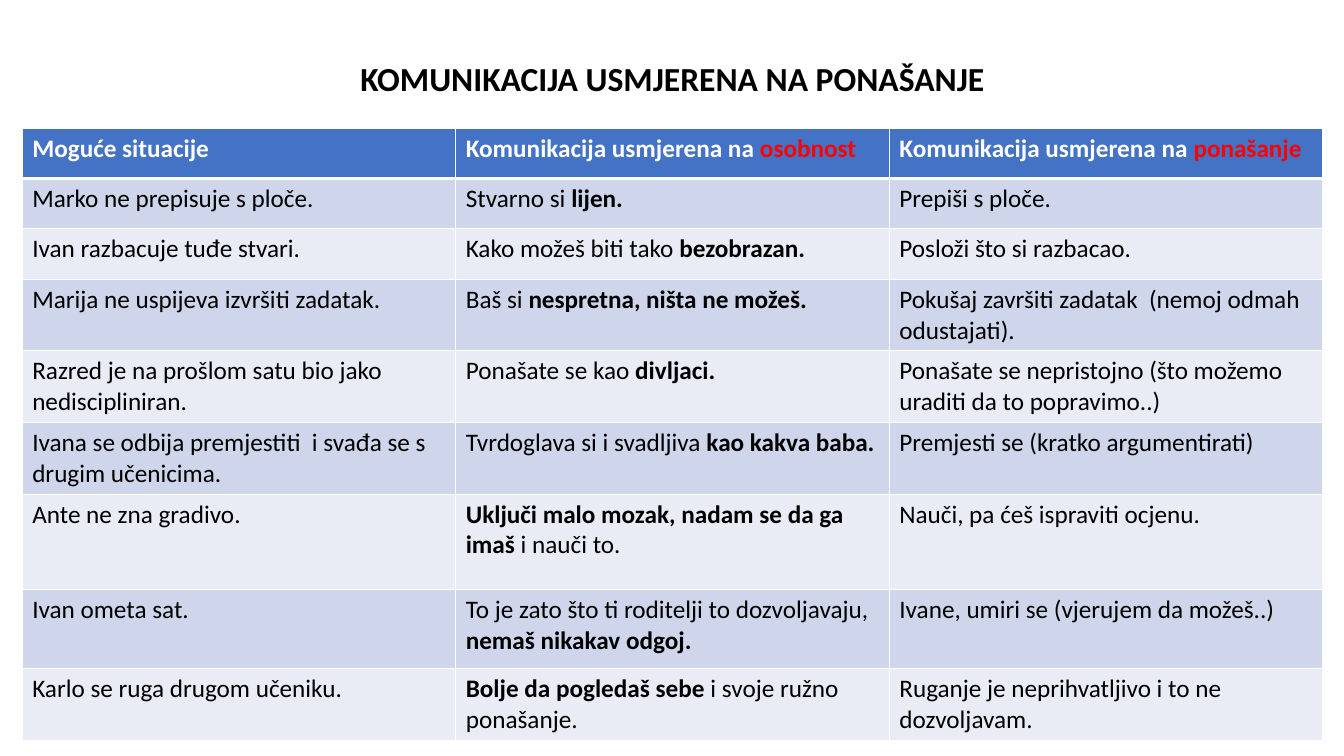
import dataclasses

import pptx
import pptx.dml.color
import pptx.enum.text
import pptx.oxml
import pptx.oxml.ns
import pptx.util

Inches = pptx.util.Inches
Pt = pptx.util.Pt


@dataclasses.dataclass(frozen=True)
class Theme:
    font: str = "Calibri"
    title_size: int = 24
    table_size: int = 18
    text: str = "000000"
    light: str = "FFFFFF"
    header: str = "4472C4"
    accent: str = "FF0000"
    bands: tuple = ("CFD5EA", "E9EBF5")
    border: int = 1
    header_border: int = 3


HEADINGS = (
    "Moguće situacije",
    "Komunikacija usmjerena na *osobnost*",
    "Komunikacija usmjerena na *ponašanje*",
)

SITUATIONS = (
    ("Marko ne prepisuje s ploče.", "Stvarno si *lijen.*", "Prepiši s ploče."),
    ("Ivan razbacuje tuđe stvari.", "Kako možeš biti tako *bezobrazan.*",
     "Posloži što si razbacao."),
    ("Marija ne uspijeva izvršiti zadatak.", "Baš si *nespretna, ništa ne možeš.*",
     "Pokušaj završiti zadatak  (nemoj odmah odustajati)."),
    ("Razred je na prošlom satu bio jako nediscipliniran.", "Ponašate se kao *divljaci.*",
     "Ponašate se nepristojno (što možemo uraditi da to popravimo..)"),
    ("Ivana se odbija premjestiti  i svađa se s drugim učenicima.",
     "Tvrdoglava si i svadljiva *kao kakva baba.*", "Premjesti se (kratko argumentirati)"),
    ("Ante ne zna gradivo.", "*Uključi malo mozak, nadam se da ga imaš *i nauči to.",
     "Nauči, pa ćeš ispraviti ocjenu."),
    ("Ivan ometa sat.",
     "To je zato što ti roditelji to dozvoljavaju, *nemaš nikakav odgoj.*",
     "Ivane, umiri se (vjerujem da možeš..)"),
    ("Karlo se ruga drugom učeniku.", "*Bolje da pogledaš sebe *i svoje ružno ponašanje.",
     "Ruganje je neprihvatljivo i to ne dozvoljavam."),
)

ROW_HEIGHTS = (0.5, 0.5, 0.5, 0.5, 0.64, 0.64, 0.95, 0.78, 0.64)


def rgb(value):
    return pptx.dml.color.RGBColor.from_string(value)


class SlideBuilder:
    def __init__(self, prs, theme):
        self.theme = theme
        self.slide = prs.slides.add_slide(prs.slide_layouts[5])

    def style(self, p, size, color, bold):
        p.font.name = self.theme.font
        p.font.size = Pt(size)
        p.font.bold = bold
        p.font.color.rgb = rgb(color)

    def title(self, text, left, top, width, height):
        sp = self.slide.shapes.title
        sp.left, sp.top = Inches(left), Inches(top)
        sp.width, sp.height = Inches(width), Inches(height)
        sp.fill.solid()
        sp.fill.fore_color.rgb = rgb(self.theme.light)
        sp.line.color.rgb = rgb(self.theme.light)
        sp.line.width = Pt(self.theme.border)
        tf = sp.text_frame
        tf.text = text
        tf.word_wrap = True
        tf.vertical_anchor = pptx.enum.text.MSO_ANCHOR.MIDDLE
        p = tf.paragraphs[0]
        p.alignment = pptx.enum.text.PP_ALIGN.CENTER
        self.style(p, self.theme.title_size, self.theme.text, True)

    def borders(self, cell, top, bottom):
        tc_pr = cell._tc.get_or_add_tcPr()
        thin = self.theme.border
        for side, width in (("L", thin), ("R", thin), ("T", top), ("B", bottom)):
            tc_pr.append(pptx.oxml.parse_xml(
                f'<a:ln{side} {pptx.oxml.ns.nsdecls("a")} w="{Pt(width)}">'
                f'<a:solidFill><a:srgbClr val="{self.theme.light}"/></a:solidFill>'
                f'</a:ln{side}>'))

    def cell(self, cell, text, row):
        theme = self.theme
        header = row == 0
        self.borders(cell,
                     theme.header_border if row == 1 else theme.border,
                     theme.header_border if header else theme.border)
        cell.fill.solid()
        cell.fill.fore_color.rgb = rgb(theme.header if header else theme.bands[(row - 1) % 2])
        p = cell.text_frame.paragraphs[0]
        self.style(p, theme.table_size, theme.light if header else theme.text, header)
        for i, part in enumerate(text.split("*")):
            if not part:
                continue
            r = p.add_run()
            r.text = part
            if i % 2:
                r.font.bold = True
                if header:
                    r.font.color.rgb = rgb(theme.accent)

    def table(self, rows, heights, left, top, width, height):
        frame = self.slide.shapes.add_table(
            len(rows), len(rows[0]), Inches(left), Inches(top), Inches(width), Inches(height))
        table = frame.table
        for i, (texts, row_height) in enumerate(zip(rows, heights)):
            table.rows[i].height = Inches(row_height)
            for j, text in enumerate(texts):
                self.cell(table.cell(i, j), text, i)
        frame.height = Inches(height)


def main():
    prs = pptx.Presentation()
    prs.slide_width, prs.slide_height = Inches(13.33), Inches(7.5)
    s = SlideBuilder(prs, Theme())
    s.title("KOMUNIKACIJA USMJERENA NA PONAŠANJE", 3.42, 0.27, 6.5, 1)
    s.table((HEADINGS,) + SITUATIONS, ROW_HEIGHTS, 0.22, 1.27, 12.9, 6.02)
    prs.save("out.pptx")


if __name__ == "__main__":
    main()
